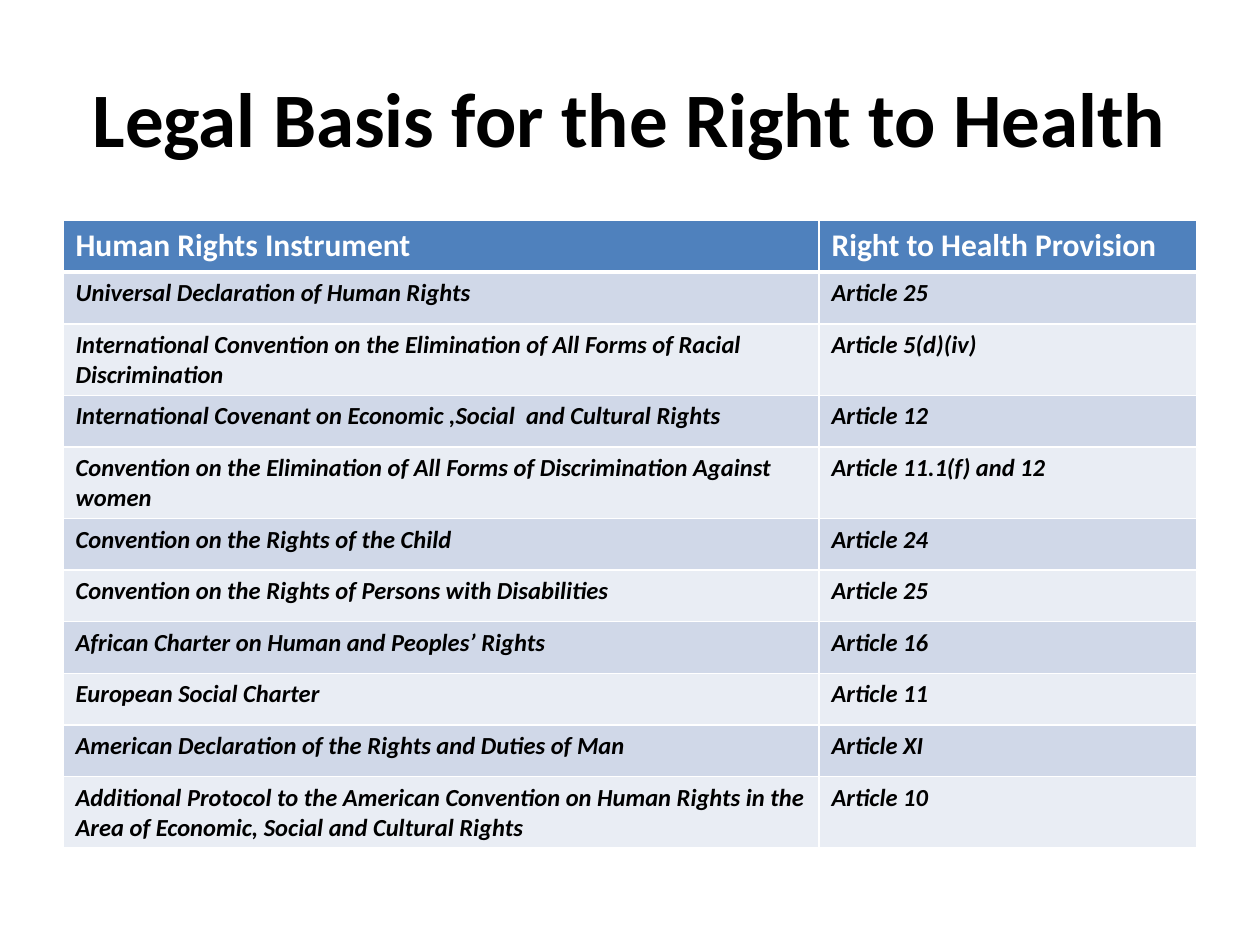
from dataclasses import dataclass

from lxml.etree import SubElement
from pptx import Presentation
from pptx.dml.color import RGBColor
from pptx.enum.text import MSO_ANCHOR, PP_ALIGN
from pptx.oxml.ns import qn
from pptx.util import Inches, Pt


@dataclass(frozen=True)
class Theme:
    font: str = "Calibri"
    text: str = "000000"
    header_text: str = "FFFFFF"
    header_fill: str = "4F81BD"
    bands: tuple = ("D0D8E8", "E9EDF4")
    border: str = "FFFFFF"
    title_size: int = 44
    header_size: int = 18
    body_size: int = 14
    thin: int = 1
    thick: int = 3


THEME = Theme()
TITLE = "Legal Basis for the Right to Health"
HEADER = ("Human Rights Instrument", "Right to Health Provision")
PROVISIONS = [
    ("Universal Declaration of Human Rights", "Article 25"),
    ("International Convention on the Elimination of All Forms of Racial Discrimination",
     "Article 5(d)(iv)"),
    ("International Covenant on Economic ,Social  and Cultural Rights", "Article 12"),
    ("Convention on the Elimination of All Forms of Discrimination Against women",
     "Article 11.1(f) and 12"),
    ("Convention on the Rights of the Child", "Article 24"),
    ("Convention on the Rights of Persons with Disabilities", "Article 25"),
    ("African Charter on Human and Peoples’ Rights", "Article 16"),
    ("European Social Charter", "Article 11"),
    ("American Declaration of the Rights and Duties of Man", "Article XI"),
    ("Additional Protocol to the American Convention on Human Rights in the Area of "
     "Economic, Social and Cultural Rights", "Article 10"),
]
COLUMN_WIDTHS = (6, 3)
ROW_HEIGHT = 0.41


def add_run(p, text, size, color, italic=False):
    r = p.add_run()
    r.text = text
    r.font.name = THEME.font
    r.font.size = Pt(size)
    r.font.bold = True
    r.font.italic = italic
    r.font.color.rgb = RGBColor.from_string(color)


def add_title(s):
    sp = s.shapes.add_textbox(Inches(0.5), Inches(0.3), Inches(9), Inches(1.25))
    tf = sp.text_frame
    tf.word_wrap = True
    tf.vertical_anchor = MSO_ANCHOR.MIDDLE
    p = tf.paragraphs[0]
    p.alignment = PP_ALIGN.CENTER
    add_run(p, TITLE, THEME.title_size, THEME.text)


def set_borders(cell, top, bottom):
    """Draw all four cell borders; widths are in points."""
    tc_pr = cell._tc.get_or_add_tcPr()
    widths = {"L": THEME.thin, "R": THEME.thin, "T": top, "B": bottom}
    for side, width in widths.items():
        ln = SubElement(tc_pr, qn(f"a:ln{side}"), w=str(Pt(width)))
        fill = SubElement(ln, qn("a:solidFill"))
        SubElement(fill, qn("a:srgbClr"), val=THEME.border)


def fill_row(table, row, texts):
    is_header = row == 0
    fill = THEME.header_fill if is_header else THEME.bands[(row - 1) % 2]
    size = THEME.header_size if is_header else THEME.body_size
    color = THEME.header_text if is_header else THEME.text
    top = THEME.thick if row == 1 else THEME.thin
    bottom = THEME.thick if is_header else THEME.thin
    for column, text in enumerate(texts):
        cell = table.cell(row, column)
        set_borders(cell, top, bottom)
        cell.fill.solid()
        cell.fill.fore_color.rgb = RGBColor.from_string(fill)
        add_run(cell.text_frame.paragraphs[0], text, size, color, italic=not is_header)


def add_provisions_table(s):
    rows = [HEADER, *PROVISIONS]
    table = s.shapes.add_table(
        len(rows), len(HEADER), Inches(0.5), Inches(1.75),
        Inches(sum(COLUMN_WIDTHS)), Inches(ROW_HEIGHT * len(rows))).table
    for column, width in zip(table.columns, COLUMN_WIDTHS):
        column.width = Inches(width)
    for i, texts in enumerate(rows):
        table.rows[i].height = Inches(ROW_HEIGHT)
        fill_row(table, i, texts)


def main():
    prs = Presentation()
    prs.slide_width, prs.slide_height = Inches(10), Inches(7.5)
    s = prs.slides.add_slide(prs.slide_layouts[6])
    add_title(s)
    add_provisions_table(s)
    prs.save("out.pptx")


if __name__ == "__main__":
    main()
